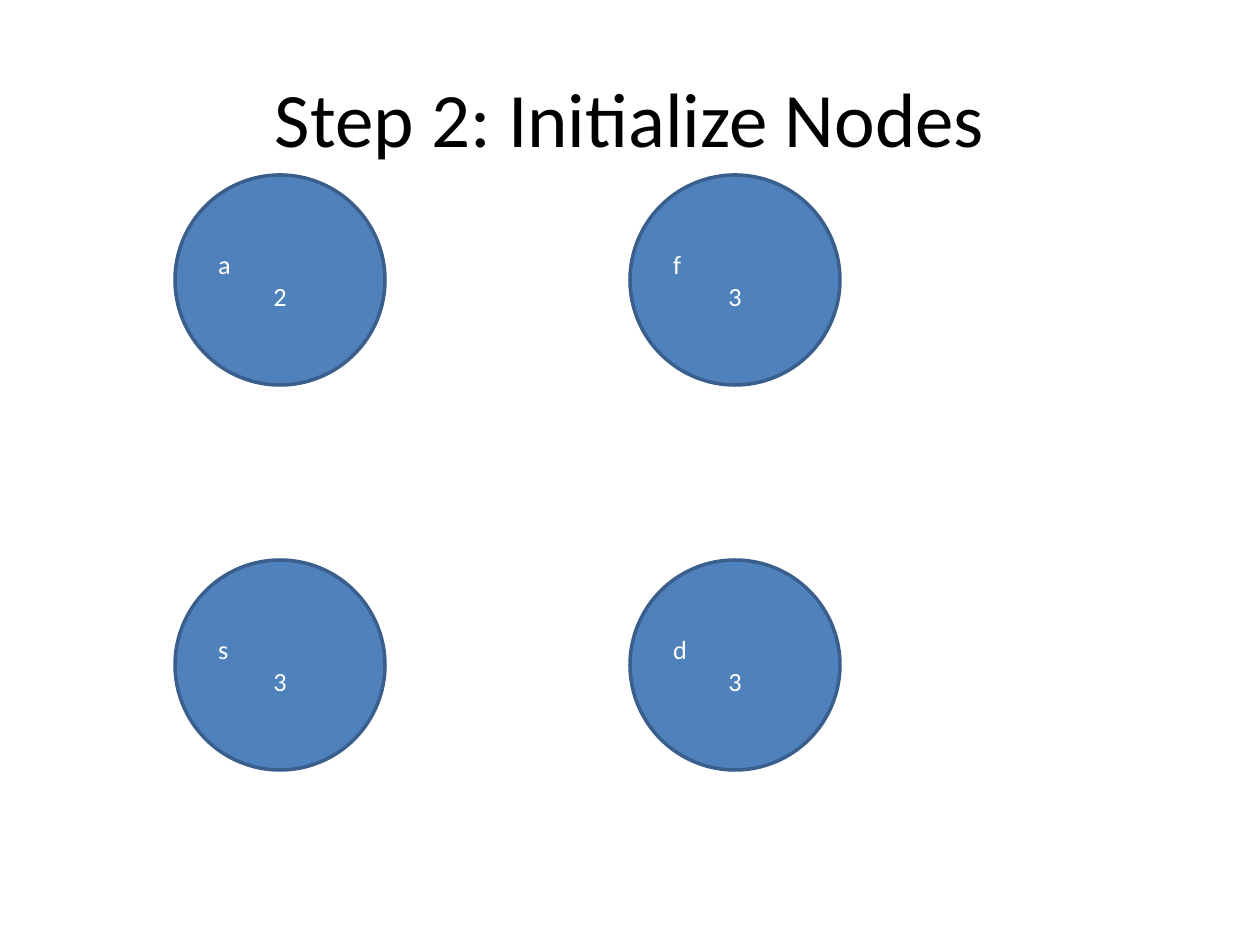
from typing import NamedTuple

from pptx import Presentation
from pptx import util as u
from pptx.dml.color import RGBColor
from pptx.enum import shapes, text
from pptx.slide import Slide

PX_PER_INCH = 126
FONT = "Calibri"
BLACK = RGBColor(0x00, 0x00, 0x00)
WHITE = RGBColor(0xFF, 0xFF, 0xFF)
BLUE = RGBColor(0x4F, 0x81, 0xBD)
DARK_BLUE = RGBColor(0x3A, 0x5F, 0x8C)

DIAMETER = 210
COLUMN_LEFTS = (175, 630)
ROW_TOPS = (175, 560)


class Node(NamedTuple):
    label: str
    value: int
    column: int
    row: int


NODES = (
    Node("a", 2, 0, 0),
    Node("f", 3, 1, 0),
    Node("s", 3, 0, 1),
    Node("d", 3, 1, 1),
)


def px(length: int) -> u.Emu:
    return u.Emu(round(length * u.Inches(1) / PX_PER_INCH))


def style_paragraph(paragraph, size: int, color: RGBColor, align) -> None:
    paragraph.alignment = align
    paragraph.font.name = FONT
    paragraph.font.size = u.Pt(size)
    paragraph.font.color.rgb = color


def add_heading(slide: Slide, wording: str) -> None:
    heading = slide.shapes.title
    heading.left, heading.top = px(63), px(38)
    heading.width, heading.height = px(1134), px(158)
    heading.text_frame.text = wording
    heading.text_frame.vertical_anchor = text.MSO_ANCHOR.MIDDLE
    style_paragraph(heading.text_frame.paragraphs[0], 44, BLACK, text.PP_ALIGN.CENTER)


def add_node(slide: Slide, node: Node) -> None:
    circle = slide.shapes.add_shape(
        shapes.MSO_SHAPE.OVAL,
        px(COLUMN_LEFTS[node.column]),
        px(ROW_TOPS[node.row]),
        px(DIAMETER),
        px(DIAMETER),
    )
    circle.shadow.inherit = False
    circle.fill.solid()
    circle.fill.fore_color.rgb = BLUE
    circle.line.color.rgb = DARK_BLUE
    circle.line.width = u.Pt(2)
    frame = circle.text_frame
    frame.word_wrap = True
    frame.vertical_anchor = text.MSO_ANCHOR.MIDDLE
    frame.text = f"{node.label}\n{node.value}"
    label, value = frame.paragraphs
    style_paragraph(label, 15, WHITE, text.PP_ALIGN.LEFT)
    style_paragraph(value, 15, WHITE, text.PP_ALIGN.CENTER)


def main() -> None:
    deck = Presentation()
    deck.slide_width, deck.slide_height = px(1260), px(945)
    slide = deck.slides.add_slide(deck.slide_layouts[5])
    add_heading(slide, "Step 2: Initialize Nodes")
    for node in NODES:
        add_node(slide, node)
    deck.save("out.pptx")


if __name__ == "__main__":
    main()
